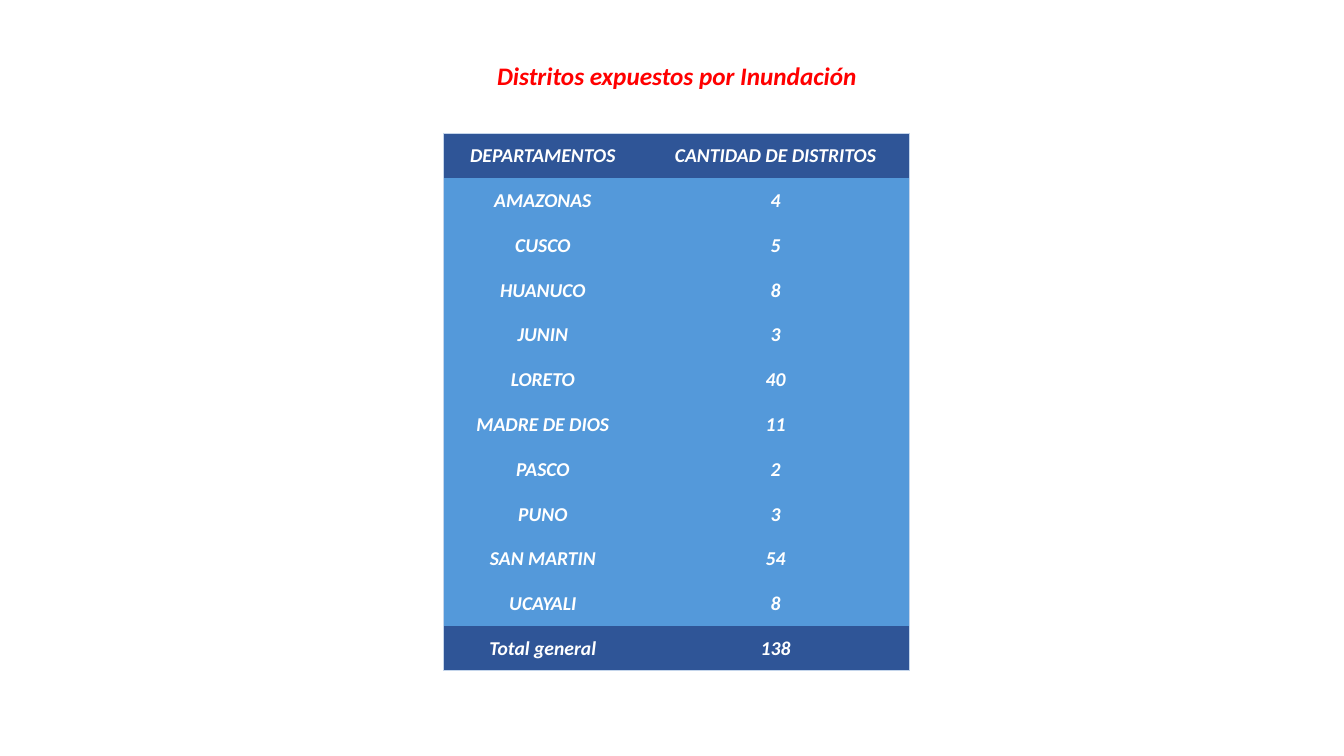
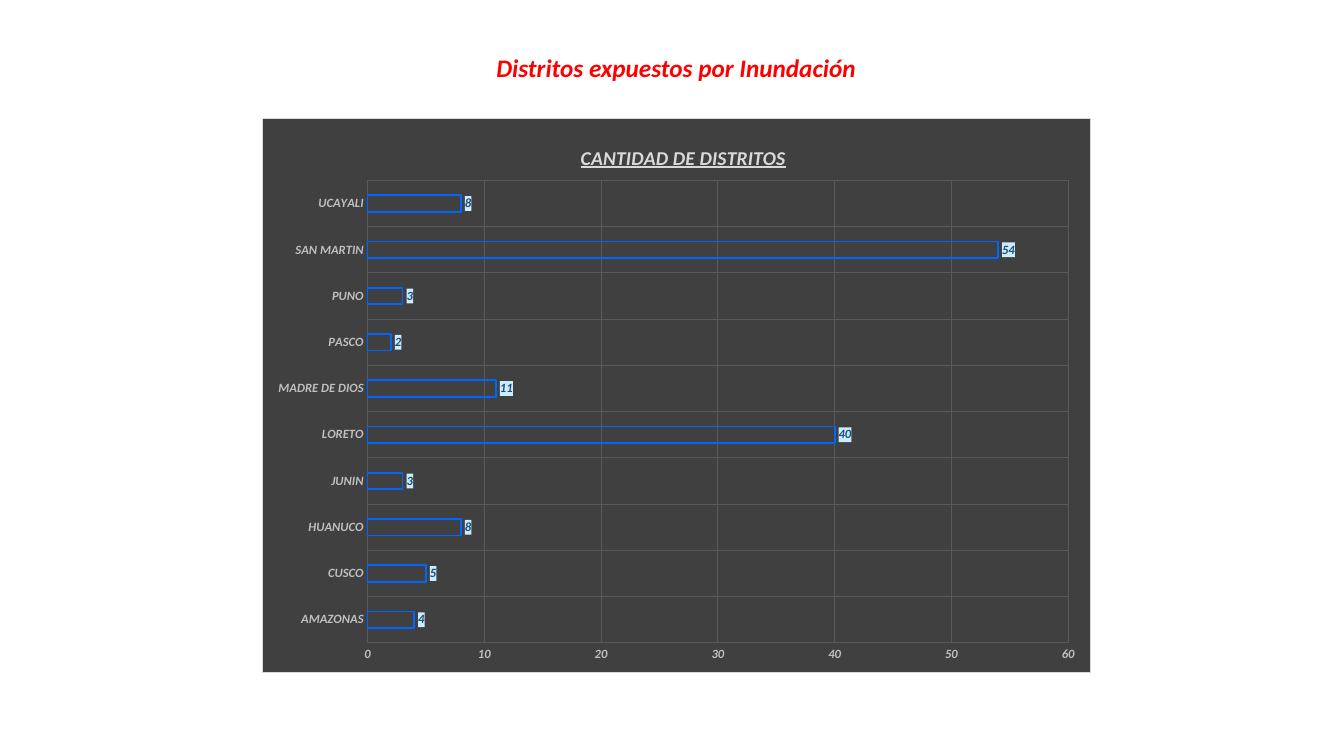
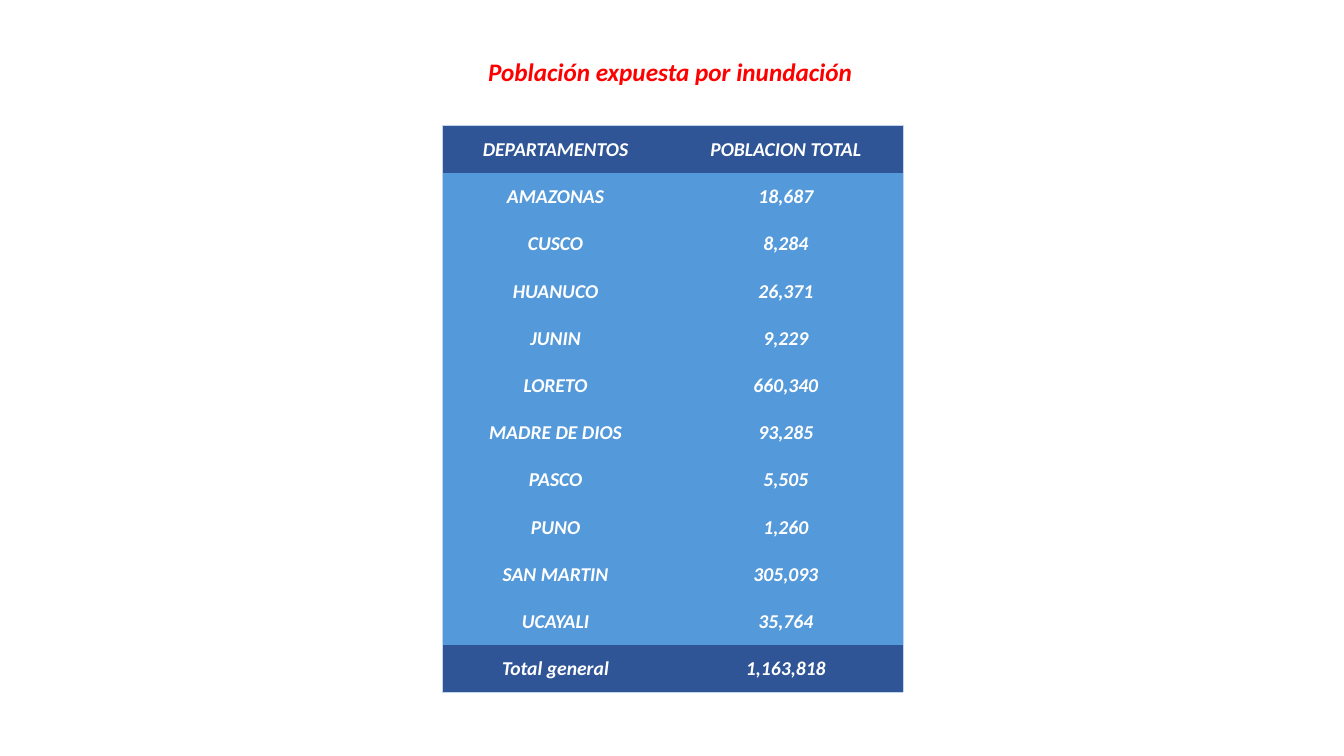
"""Build three slides on districts and population exposed to flooding."""
import pptx
import pptx.chart.data
import pptx.dml.color
import pptx.enum.chart
import pptx.enum.text
import pptx.oxml
import pptx.oxml.ns
import pptx.util

Cm = pptx.util.Cm
Pt = pptx.util.Pt
qn = pptx.oxml.ns.qn

FONT = "Calibri"
COLORS = {
    "title": "FF0000",
    "band": "2F5597",
    "body": "5499DA",
    "border": "C4D5EB",
    "white": "FFFFFF",
    "panel": "404040",
    "panel_edge": "D9D9D9",
    "grid": "595959",
    "axis": "BFBFBF",
    "bar": "0066FF",
    "label": "1F4E79",
    "label_back": "CCECFF",
}
NO_TABLE_STYLE = "{2D5ABB26-0587-4C30-8999-92F81FD0307C}"
DISTRICTS = {
    "AMAZONAS": 4, "CUSCO": 5, "HUANUCO": 8, "JUNIN": 3, "LORETO": 40,
    "MADRE DE DIOS": 11, "PASCO": 2, "PUNO": 3, "SAN MARTIN": 54, "UCAYALI": 8,
}
POPULATION = {
    "AMAZONAS": 18687, "CUSCO": 8284, "HUANUCO": 26371, "JUNIN": 9229,
    "LORETO": 660340, "MADRE DE DIOS": 93285, "PASCO": 5505, "PUNO": 1260,
    "SAN MARTIN": 305093, "UCAYALI": 35764,
}
DISTRICTS_TITLE = "Distritos expuestos por Inundación"
DISTRICTS_HEADING = "CANTIDAD DE DISTRITOS"


def rgb(name):
    """Return the named colour."""
    return pptx.dml.color.RGBColor.from_string(COLORS[name])


def set_font(font, size, color):
    """Apply the bold italic face used throughout."""
    font.name, font.size = FONT, Pt(size)
    font.bold = font.italic = True
    font.color.rgb = rgb(color)


def set_line(line, color, width):
    """Give a line its colour and width."""
    line.color.rgb = rgb(color)
    line.width = Pt(width)


def fill_xml(color):
    """Return the XML of a solid fill."""
    return f'<a:solidFill><a:srgbClr val="{COLORS[color]}"/></a:solidFill>'


def line_xml(tag, color, width):
    """Return the XML of a coloured line."""
    return f'<a:{tag} w="{Pt(width)}">{fill_xml(color)}</a:{tag}>'


def parse_xml(tag, content):
    """Make an element of the chart or drawing namespace."""
    return pptx.oxml.parse_xml(
        f'<{tag} {pptx.oxml.ns.nsdecls("a", "c")}>{content}</{tag}>')


def add_titled_slide(deck, text, center, top):
    """Add a slide with its red title centred at the given place."""
    slide = deck.slides.add_slide(deck.slide_layouts[5])
    title = slide.shapes.title
    width = 9.7
    title.left, title.top = Cm(center - width / 2), Cm(top)
    title.width, title.height = Cm(width), Cm(1.02)
    frame = title.text_frame
    frame.text = text
    frame.word_wrap = False
    frame.auto_size = pptx.enum.text.MSO_AUTO_SIZE.NONE
    frame.vertical_anchor = pptx.enum.text.MSO_ANCHOR.MIDDLE
    heading = frame.paragraphs[0]
    heading.alignment = pptx.enum.text.PP_ALIGN.CENTER
    set_font(heading.font, 18, "title")
    return slide


def format_cell(cell, text, fill, edges):
    """Write one centred cell with its fill and outer borders."""
    cell.text = text
    cell.vertical_anchor = pptx.enum.text.MSO_ANCHOR.MIDDLE
    cell.margin_left = cell.margin_right = cell.margin_top = Cm(0.03)
    cell.margin_bottom = 0
    properties = cell._tc.get_or_add_tcPr()
    for edge in edges:
        border = parse_xml("a:tcPr", line_xml(edge, "border", 0.5))[0]
        properties.append(border)
    cell.fill.solid()
    cell.fill.fore_color.rgb = rgb(fill)
    entry = cell.text_frame.paragraphs[0]
    entry.alignment = pptx.enum.text.PP_ALIGN.CENTER
    set_font(entry.font, 14, "white")


def add_department_table(slide, heading, values, left, top, widths, row_height):
    """Add a table of departments closed by its total."""
    rows = [("DEPARTAMENTOS", heading)]
    rows += [(name, f"{value:,}") for name, value in values.items()]
    rows.append(("Total general", f"{sum(values.values()):,}"))
    last = len(rows) - 1
    table = slide.shapes.add_table(
        len(rows), 2, Cm(left), Cm(top),
        Cm(sum(widths)), Cm(row_height * len(rows))).table
    table.first_row = table.horz_banding = False
    table._tbl.tblPr.find(qn("a:tableStyleId")).text = NO_TABLE_STYLE
    for column, width in zip(table.columns, widths):
        column.width = Cm(width)
    for r, texts in enumerate(rows):
        table.rows[r].height = Cm(row_height)
        fill = "band" if r in (0, last) else "body"
        outer = {0: ["lnT"], last: ["lnB"]}.get(r, [])
        for c, side in enumerate(("lnL", "lnR")):
            format_cell(table.cell(r, c), texts[c], fill, [side] + outer)


def set_layout(parent, index, mode, **place):
    """Fix the place of a chart part in fractions of the chart."""
    previous = parent.find(qn("c:layout"))
    if previous is not None:
        parent.remove(previous)
    target = '<c:layoutTarget val="inner"/>' if mode == "inner" else ""
    modes = '<c:xMode val="edge"/><c:yMode val="edge"/>'
    sizes = "".join(f'<c:{key} val="{value}"/>' for key, value in place.items())
    manual = f"<c:manualLayout>{target}{modes}{sizes}</c:manualLayout>"
    parent.insert(index, parse_xml("c:layout", manual))


def format_axis(axis):
    """Show an axis as grey labels and grid lines only."""
    axis.has_major_gridlines = True
    set_line(axis.major_gridlines.format.line, "grid", 0.75)
    axis.major_tick_mark = pptx.enum.chart.XL_TICK_MARK.NONE
    axis.minor_tick_mark = pptx.enum.chart.XL_TICK_MARK.NONE
    axis.format.line.fill.background()
    set_font(axis.tick_labels.font, 9, "axis")


def format_labels(labels):
    """Show values beyond the bars on a pale ground."""
    labels.show_value = True
    labels.number_format, labels.number_format_is_linked = "#,##0", False
    labels.position = pptx.enum.chart.XL_LABEL_POSITION.OUTSIDE_END
    set_font(labels.font, 9, "label")
    ground = parse_xml("c:spPr", fill_xml("label_back"))
    labels._element.find(qn("c:txPr")).addprevious(ground)


def add_bar_chart(slide, heading, values, left, top, width, height):
    """Add a dark bar chart with outlined bars."""
    data = pptx.chart.data.CategoryChartData(number_format="#,##0")
    data.categories = list(values)
    data.add_series(heading, list(values.values()))
    chart = slide.shapes.add_chart(
        pptx.enum.chart.XL_CHART_TYPE.BAR_CLUSTERED,
        Cm(left), Cm(top), Cm(width), Cm(height), data).chart
    chart.font.name, chart.font.size = FONT, Pt(10)
    chart.has_legend = False
    chart.has_title = True
    caption = chart.chart_title.text_frame.paragraphs[0]
    caption.text = heading
    set_font(caption.font, 14, "panel_edge")
    caption.font.underline = True

    format_axis(chart.category_axis)
    format_axis(chart.value_axis)
    chart.value_axis.minimum_scale = 0
    chart.value_axis.maximum_scale = 60
    chart.value_axis.major_unit = 10

    plot = chart.plots[0]
    plot.gap_width, plot.overlap = 182, -50
    plot.vary_by_categories = False
    bars = plot.series[0]
    bars.format.fill.background()
    set_line(bars.format.line, "bar", 1.25)
    format_labels(bars.data_labels)

    body = chart._chartSpace.find(qn("c:chart"))
    set_layout(body.find(qn("c:title")), 1, "edge", x=0.38, y=0.04)
    set_layout(body.find(qn("c:plotArea")), 0, "inner",
               x=0.127, y=0.112, w=0.846, h=0.834)
    panel = fill_xml("panel") + line_xml("ln", "panel_edge", 0.75)
    body.addnext(parse_xml("c:spPr", panel))


def main():
    """Build and save the presentation."""
    deck = pptx.Presentation()
    deck.slide_width, deck.slide_height = Cm(33.87), Cm(19.05)

    slide = add_titled_slide(deck, DISTRICTS_TITLE, 17.06, 1.4)
    add_department_table(slide, DISTRICTS_HEADING, DISTRICTS,
                         11.18, 3.35, (5, 6.73), 1.13)

    slide = add_titled_slide(deck, DISTRICTS_TITLE, 17.04, 1.2)
    add_bar_chart(slide, DISTRICTS_HEADING, DISTRICTS, 6.6, 2.97, 20.9, 14)

    slide = add_titled_slide(deck, "Población expuesta por inundación", 16.89, 1.3)
    add_department_table(slide, "POBLACION TOTAL", POPULATION,
                         11.15, 3.16, (5.7, 5.91), 1.19)

    deck.save("out.pptx")


if __name__ == "__main__":
    main()
